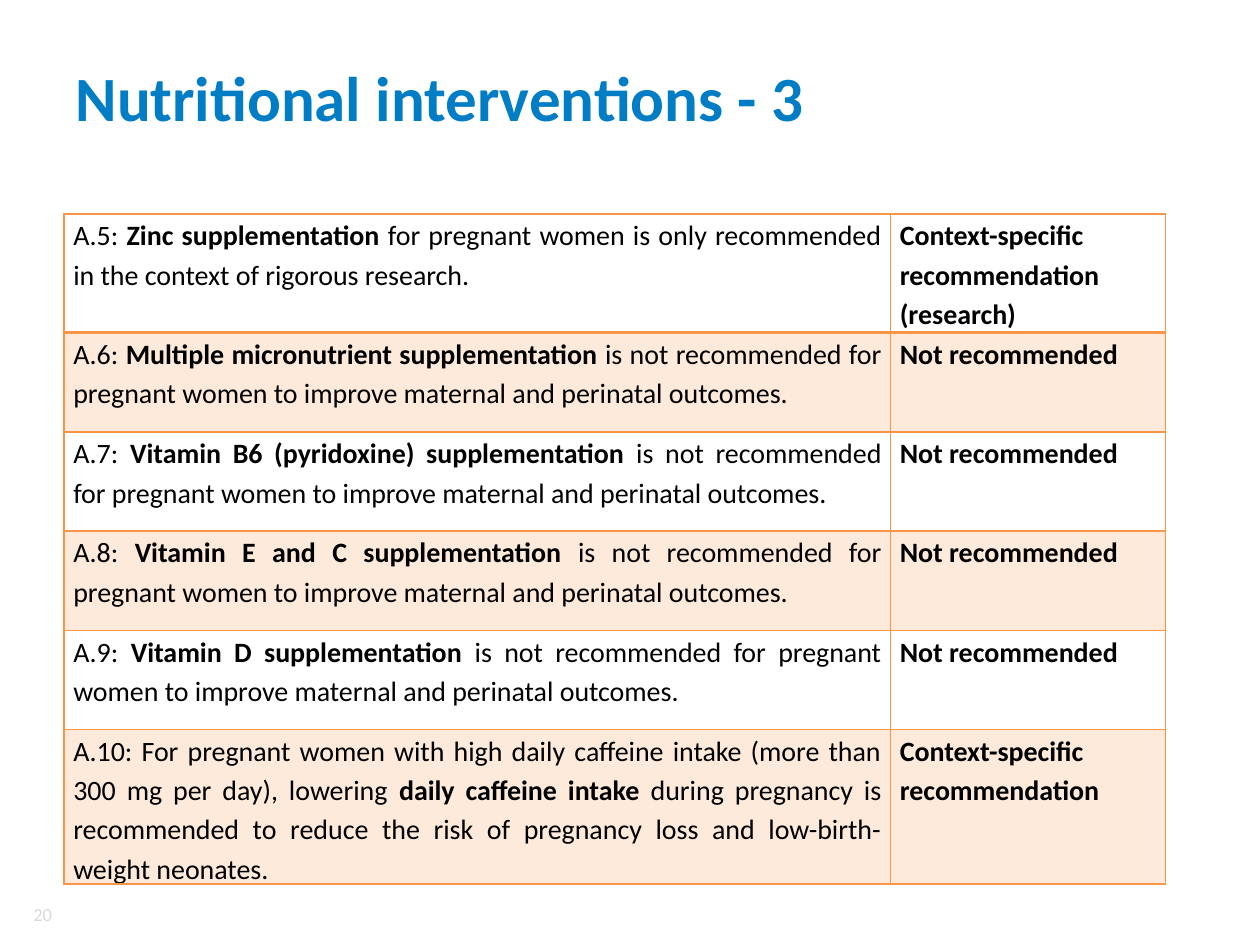
import pptx
import pptx.util
import pptx.dml.color
import pptx.enum.text
import pptx.oxml
import pptx.oxml.ns
import lxml.etree

Pt = pptx.util.Pt
RGBColor = pptx.dml.color.RGBColor
ALIGN = pptx.enum.text.PP_ALIGN
MIDDLE = pptx.enum.text.MSO_ANCHOR.MIDDLE
qn = pptx.oxml.ns.qn

BLUE = RGBColor(0x00, 0x7D, 0xC5)
ORANGE = RGBColor(0xF7, 0x96, 0x46)
BLACK = RGBColor(0x00, 0x00, 0x00)
GREY = RGBColor(0xD9, 0xD9, 0xD9)

OUTCOMES = "is not recommended for pregnant women to improve maternal and perinatal outcomes."
NOT_RECOMMENDED = "Not recommended"

# Lead text, bold intervention, remaining text, recommendation
INTERVENTIONS = [
    ("A.5: ", "Zinc supplementation",
     " for pregnant women is only recommended in the context of rigorous research.",
     "Context-specific recommendation (research)"),
    ("A.6: ", "Multiple micronutrient supplementation", " " + OUTCOMES, NOT_RECOMMENDED),
    ("A.7: ", "Vitamin B6 (pyridoxine) supplementation ", OUTCOMES, NOT_RECOMMENDED),
    ("A.8: ", "Vitamin E and C supplementation", " " + OUTCOMES, NOT_RECOMMENDED),
    ("A.9: ", "Vitamin D supplementation", " " + OUTCOMES, NOT_RECOMMENDED),
    ("A.10: For pregnant women with high daily caffeine intake "
     "(more than 300 mg per day), lowering ", "daily caffeine intake",
     " during pregnancy is recommended to reduce the risk of pregnancy loss "
     "and low-birth-weight neonates.", "Context-specific recommendation"),
]
COL_WIDTHS = [472.3, 157]
ROW_HEIGHTS = [67.7, 56.7, 56.7, 56.7, 56.7, 75]


class SlideBuilder:
    font = "Calibri"
    body_size = 16
    line_spacing = 1.15
    cell_margin = 5.2
    tint = 20

    def __init__(self, slide):
        self.s = slide

    def add_run(self, p, text, size, color, bold=False):
        r = p.add_run()
        r.text = text
        r.font.name = self.font
        r.font.size = Pt(size)
        r.font.bold = bold
        r.font.color.rgb = color

    def title(self, text, x, y, w, h):
        sp = self.s.shapes.title
        sp.left, sp.top, sp.width, sp.height = Pt(x), Pt(y), Pt(w), Pt(h)
        tf = sp.text_frame
        tf.vertical_anchor = MIDDLE
        p = tf.paragraphs[0]
        p.alignment = ALIGN.LEFT
        self.add_run(p, text, 36, BLUE, bold=True)

    def text(self, text, x, y, w, h, size, color, align):
        tf = self.s.shapes.add_textbox(Pt(x), Pt(y), Pt(w), Pt(h)).text_frame
        tf.word_wrap = True
        tf.vertical_anchor = MIDDLE
        tf.margin_left = tf.margin_right = tf.margin_top = tf.margin_bottom = 0
        p = tf.paragraphs[0]
        p.alignment = align
        self.add_run(p, text, size, color)

    def table(self, x, y, col_widths, row_heights):
        frame = self.s.shapes.add_table(
            len(row_heights), len(col_widths), Pt(x), Pt(y),
            Pt(sum(col_widths)), Pt(sum(row_heights)))
        tbl = frame.table
        tbl.first_row = tbl.horz_banding = False
        for col, width in zip(tbl.columns, col_widths):
            col.width = Pt(width)
        for row, height in zip(tbl.rows, row_heights):
            row.height = Pt(height)
        return tbl

    def borders(self, cell, color, top, bottom):
        tcPr = cell._tc.get_or_add_tcPr()
        for tag, width in (("lnL", 1), ("lnR", 1), ("lnT", top), ("lnB", bottom)):
            ln = lxml.etree.SubElement(tcPr, qn("a:" + tag), w=str(Pt(width)))
            fill = lxml.etree.SubElement(ln, qn("a:solidFill"))
            lxml.etree.SubElement(fill, qn("a:srgbClr"), val=str(color))

    def shade(self, cell, color):
        if color is None:
            cell.fill.background()
            return
        cell.fill.solid()
        cell.fill.fore_color.rgb = color
        clr = cell._tc.tcPr.find(qn("a:solidFill")).find(qn("a:srgbClr"))
        lxml.etree.SubElement(clr, qn("a:alpha"), val=str(self.tint * 1000))

    def cell(self, cell, runs, align):
        cell.margin_left = cell.margin_right = Pt(self.cell_margin)
        cell.margin_top = cell.margin_bottom = 0
        p = cell.text_frame.paragraphs[0]
        p.alignment = align
        p.line_spacing = self.line_spacing
        for text, bold in runs:
            self.add_run(p, text, self.body_size, BLACK, bold)


def main():
    prs = pptx.Presentation()
    prs.slide_width, prs.slide_height = Pt(720), Pt(540)
    b = SlideBuilder(prs.slides.add_slide(prs.slide_layouts[5]))

    # Title and page number
    b.title("Nutritional interventions - 3", 36, 21.6, 648, 67)
    b.text("20", 8.6, 514, 21, 17.3, 10.5, GREY, ALIGN.RIGHT)

    # Recommendations table: thicker rule under the first row, every second row tinted
    tbl = b.table(36.7, 122.4, COL_WIDTHS, ROW_HEIGHTS)
    for i, (lead, name, rest, advice) in enumerate(INTERVENTIONS):
        contents = [[(lead, False), (name, True), (rest, False)], [(advice, True)]]
        for j, runs in enumerate(contents):
            cell = tbl.cell(i, j)
            align = ALIGN.LEFT if (i, j) == (0, 1) else ALIGN.JUSTIFY
            b.cell(cell, runs, align)
            b.borders(cell, ORANGE, top=2 if i == 1 else 1, bottom=2 if i == 0 else 1)
            b.shade(cell, ORANGE if i % 2 else None)

    prs.save("out.pptx")


if __name__ == "__main__":
    main()
